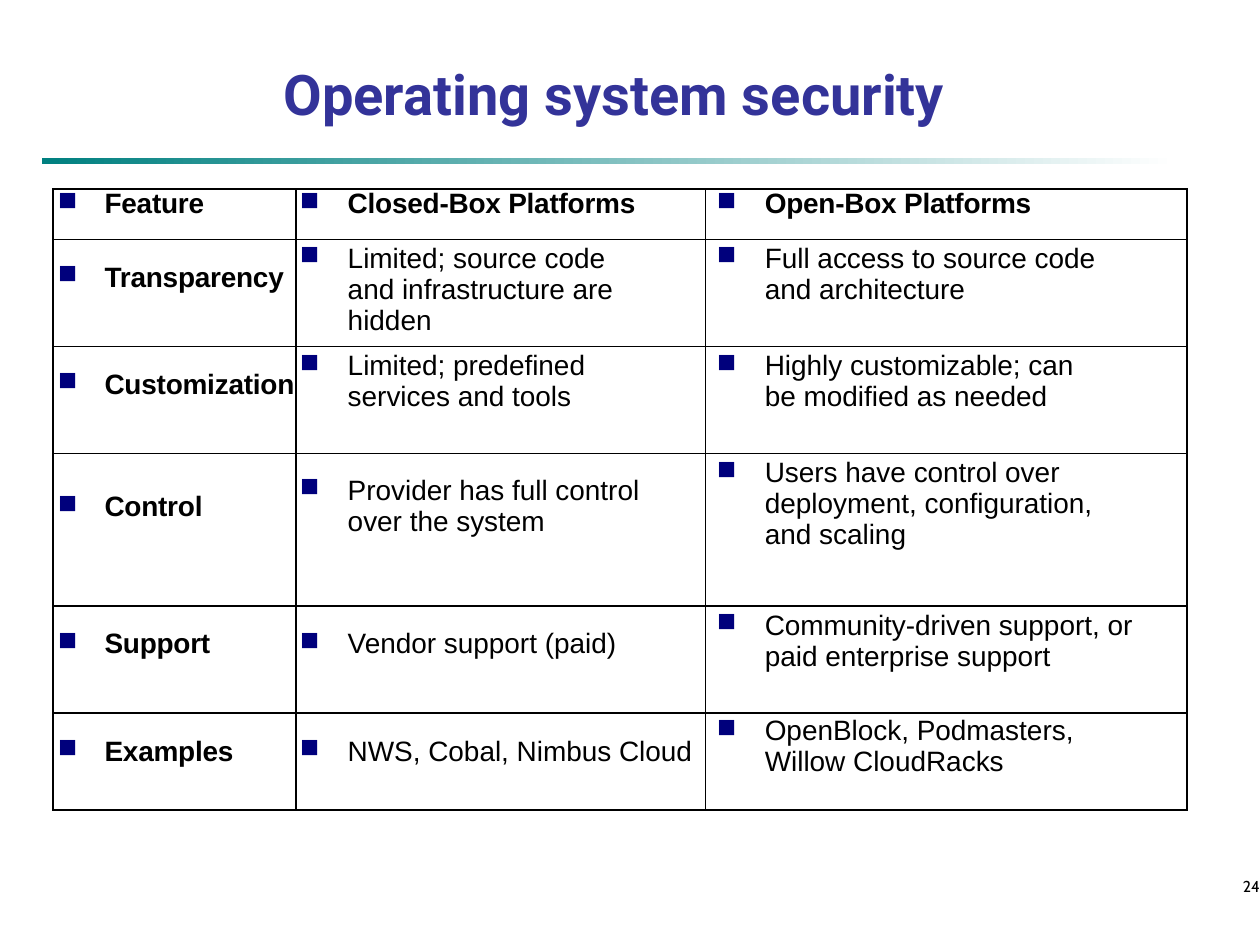
from dataclasses import dataclass

from lxml import etree
from pptx import Presentation
from pptx.dml.color import RGBColor
from pptx.enum.shapes import MSO_SHAPE
from pptx.enum.text import MSO_ANCHOR, PP_ALIGN
from pptx.oxml.ns import qn
from pptx.util import Inches, Pt

RECT = MSO_SHAPE.RECTANGLE
TOP, BOTTOM = MSO_ANCHOR.TOP, MSO_ANCHOR.BOTTOM
CENTER, RIGHT = PP_ALIGN.CENTER, PP_ALIGN.RIGHT


@dataclass(frozen=True)
class Theme:
    black: str = "000000"
    white: str = "FFFFFF"
    title: str = "333399"
    teal: str = "008080"
    bullet: str = "00007C"
    title_font: str = "Roboto"
    body_font: str = "Arial"
    number_font: str = "Cabin"
    title_size: float = 32
    body_size: float = 16
    number_size: float = 9


THEME = Theme()
COL_WIDTHS = [1.93, 3.25, 3.82]
ROW_HEIGHTS = [0.4, 0.85, 0.85, 1.21, 0.85, 0.77]
INDENTS = [(0.41, -0.37), (0.41, -0.38), (0.47, -0.38)]  # per column

# Each cell: text, top margin, right margin
ROWS = [
    [("Feature", 0, 0), ("Closed-Box Platforms", 0, 0),
     ("Open-Box Platforms", 0, 0)],
    [("Transparency", 0.18, 0),
     ("Limited; source code and infrastructure are hidden", 0.03, 0.4),
     ("Full access to source code and architecture", 0.03, 0.67)],
    [("Customization", 0.18, 0),
     ("Limited; predefined services and tools", 0.03, 0.4),
     ("Highly customizable; can be modified as needed", 0.03, 0.67)],
    [("Control", 0.3, 0),
     ("Provider has full control over the system", 0.17, 0.4),
     ("Users have control over deployment, configuration, and scaling",
      0.03, 0.67)],
    [("Support", 0.18, 0), ("Vendor support (paid)", 0.18, 0.4),
     ("Community-driven support, or paid enterprise support", 0.03, 0.4)],
    [("Examples", 0.18, 0), ("NWS, Cobal, Nimbus Cloud", 0.18, 0),
     ("OpenBlock, Podmasters, Willow CloudRacks", 0.02, 0.67)],
]


def set_all(obj, values):
    for name, value in values.items():
        setattr(obj, name, value)


def add_run(p, text, font, size, color, bold=False):
    r = p.add_run()
    r.text = text
    set_all(r.font, {"name": font, "size": Pt(size), "bold": bold})
    r.font.color.rgb = RGBColor.from_string(color)
    return r


def add_text(s, box, text, font, size, color, align, bold=False, **frame):
    tf = s.shapes.add_textbox(*map(Inches, box)).text_frame
    set_all(tf, {"word_wrap": True, **frame})
    p = tf.paragraphs[0]
    p.alignment = align
    add_run(p, text, font, size, color, bold)


def add_rule(s):
    sp = s.shapes.add_shape(RECT, *map(Inches, (0.33, 1.25, 9, 0.05)))
    sp.shadow.inherit = False
    sp.line.fill.background()
    sp.fill.gradient()
    sp.fill.gradient_angle = 0
    for stop, color in zip(sp.fill.gradient_stops, (THEME.teal, THEME.white)):
        stop.color.rgb = RGBColor.from_string(color)


def add_bullet(p, left, hanging):
    pPr = p._p.get_or_add_pPr()
    pPr.set("marL", str(Inches(left)))
    pPr.set("indent", str(Inches(hanging)))
    color = etree.SubElement(pPr, qn("a:buClr"))
    etree.SubElement(color, qn("a:srgbClr"), val=THEME.bullet)
    etree.SubElement(pPr, qn("a:buSzPct"), val="94000")
    etree.SubElement(pPr, qn("a:buChar"), char="■")


def add_borders(cell):
    tcPr = cell._tc.get_or_add_tcPr()
    for side in ("lnL", "lnR", "lnT", "lnB"):
        ln = etree.SubElement(tcPr, qn(f"a:{side}"), w=str(Pt(1)))
        fill = etree.SubElement(ln, qn("a:solidFill"))
        etree.SubElement(fill, qn("a:srgbClr"), val=THEME.black)


def fill_cell(cell, text, top, right, indent, header, bold):
    set_all(cell, {"margin_left": 0, "margin_top": Inches(top),
                   "margin_right": Inches(right), "margin_bottom": 0,
                   "vertical_anchor": TOP})
    add_borders(cell)
    cell.fill.background()
    p = cell.text_frame.paragraphs[0]
    if header:
        p.line_spacing = Pt(17.6)
    add_bullet(p, *indent)
    r = add_run(p, text, THEME.body_font, THEME.body_size, THEME.black, bold)
    if bold:  # slightly tightened so that the labels fit their column
        r.font._element.set("spc", "-10")


def add_comparison(s):
    box = (0.42, 1.5, sum(COL_WIDTHS), sum(ROW_HEIGHTS))
    table = s.shapes.add_table(len(ROWS), len(COL_WIDTHS),
                               *map(Inches, box)).table
    set_all(table, {"first_row": False, "horz_banding": False})
    for col, width in zip(table.columns, COL_WIDTHS):
        col.width = Inches(width)
    for row, height in zip(table.rows, ROW_HEIGHTS):
        row.height = Inches(height)
    for i, row in enumerate(ROWS):
        for j, (text, top, right) in enumerate(row):
            fill_cell(table.cell(i, j), text, top, right, INDENTS[j],
                      header=i == 0, bold=i == 0 or j == 0)


def main():
    prs = Presentation()
    set_all(prs, {"slide_width": Inches(10), "slide_height": Inches(7.5)})
    s = prs.slides.add_slide(prs.slide_layouts[6])

    # Rule under the title
    add_rule(s)
    # Comparison table
    add_comparison(s)
    # Slide number
    add_text(s, (9.77, 6.93, 0.23, 0.18), "24", THEME.number_font,
             THEME.number_size, THEME.black, RIGHT, vertical_anchor=BOTTOM,
             margin_left=0, margin_top=0, margin_right=0, margin_bottom=0)
    # Title
    add_text(s, (1.75, 0.42, 6.25, 0.64), "Operating system security",
             THEME.title_font, THEME.title_size, THEME.title, CENTER, bold=True)

    prs.save("out.pptx")


if __name__ == "__main__":
    main()
